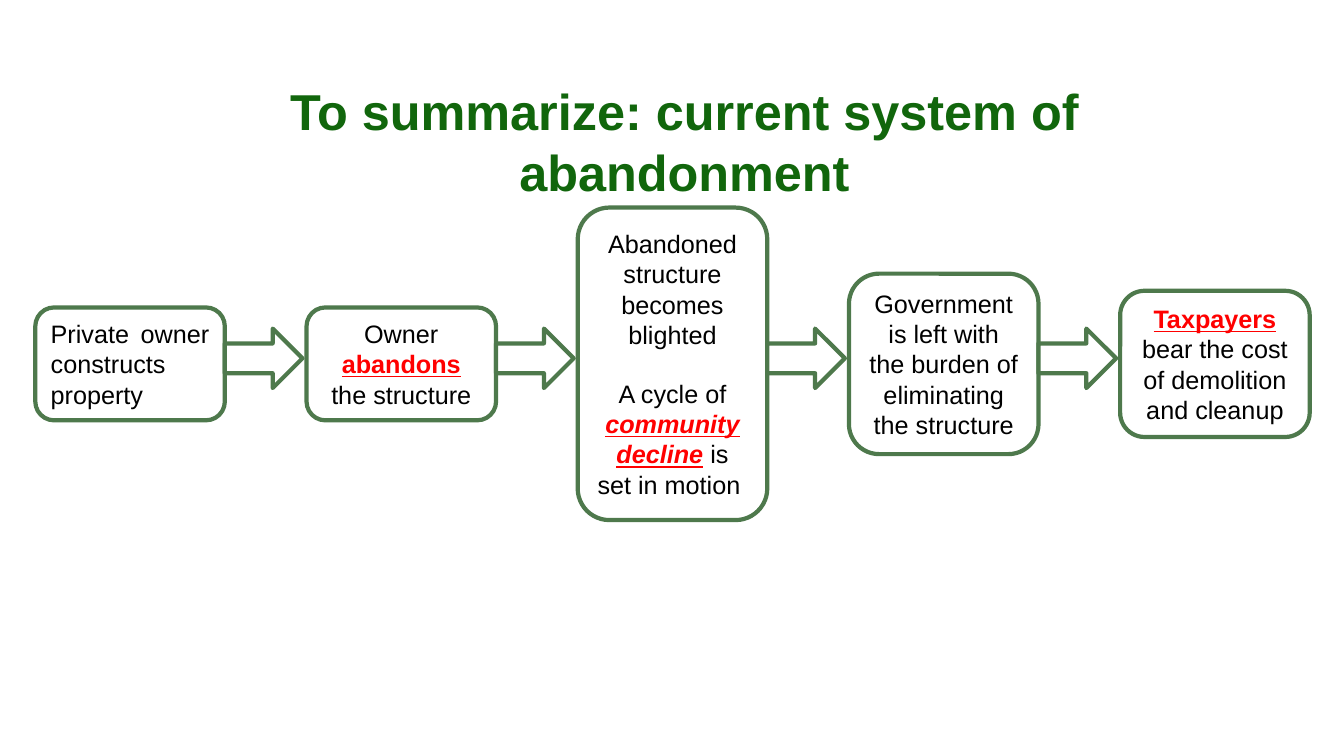
from pptx import Presentation
from pptx.dml.color import RGBColor
from pptx.enum.shapes import MSO_SHAPE
from pptx.enum.text import MSO_ANCHOR, PP_ALIGN
from pptx.util import Inches, Pt

TITLE = RGBColor(0x11, 0x66, 0x0C)
GREEN = RGBColor(0x4E, 0x79, 0x4C)
RED = RGBColor(0xFF, 0x00, 0x00)
BLACK = RGBColor(0x00, 0x00, 0x00)
WHITE = RGBColor(0xFF, 0xFF, 0xFF)

LEFT, PITCH, BOX_W = 0.35, 2.69, 1.88
BOX_MID, ARROW_MID = 3.61, 3.555
ARROW_H, ARROW_GAP = 0.59, 0.04
BLANK_LINE = Pt(20.7)


def add_run(p, text, size=18, color=BLACK, bold=False, italic=False, underline=False):
    r = p.add_run()
    r.text = text
    r.font.name = "Arial"
    r.font.size = Pt(size)
    r.font.color.rgb = color
    r.font.bold = bold
    r.font.italic = italic
    r.font.underline = underline


prs = Presentation()
prs.slide_width, prs.slide_height = Inches(13.33), Inches(7.5)
s = prs.slides.add_slide(prs.slide_layouts[6])

sp = s.shapes.add_textbox(Inches(2.29), Inches(0.75), Inches(9), Inches(1.31))
tf = sp.text_frame
tf.word_wrap = True
p = tf.paragraphs[0]
p.alignment = PP_ALIGN.CENTER
add_run(p, "To summarize: current system of abandonment", size=36, color=TITLE, bold=True)

key = dict(color=RED, bold=True, underline=True)
steps = [
    (1.12, PP_ALIGN.JUSTIFY, [[("Private owner constructs property", {})]]),
    (1.12, PP_ALIGN.CENTER, [[("Owner ", {}), ("abandons", key)], [("the structure", {})]]),
    (3.10, PP_ALIGN.CENTER, [
        [("Abandoned structure becomes blighted", {})],
        [("A cycle of ", {}), ("community decline", dict(key, italic=True)),
         (" is set in motion ", {})],
    ]),
    (1.79, PP_ALIGN.CENTER,
     [[("Government is left with the burden of eliminating the structure", {})]]),
    (1.45, PP_ALIGN.CENTER,
     [[("Taxpayers", key), (" bear the cost of demolition and cleanup", {})]]),
]

for i, (height, align, paragraphs) in enumerate(steps):
    sp = s.shapes.add_shape(
        MSO_SHAPE.ROUNDED_RECTANGLE, Inches(LEFT + i * PITCH),
        Inches(BOX_MID - height / 2), Inches(BOX_W), Inches(height))
    sp.shadow.inherit = False
    sp.fill.background()
    sp.line.color.rgb = GREEN
    sp.line.width = Pt(3)
    tf = sp.text_frame
    tf.word_wrap = True
    tf.vertical_anchor = MSO_ANCHOR.MIDDLE
    for j, runs in enumerate(paragraphs):
        p = tf.add_paragraph() if j else tf.paragraphs[0]
        p.alignment = align
        if j and i == 2:
            p.space_before = BLANK_LINE
        for text, style in runs:
            add_run(p, text, **style)

for i in range(len(steps) - 1):
    sp = s.shapes.add_shape(
        MSO_SHAPE.RIGHT_ARROW, Inches(LEFT + i * PITCH + BOX_W),
        Inches(ARROW_MID - ARROW_H / 2), Inches(PITCH - BOX_W - ARROW_GAP), Inches(ARROW_H))
    sp.shadow.inherit = False
    sp.fill.solid()
    sp.fill.fore_color.rgb = WHITE
    sp.line.color.rgb = GREEN
    sp.line.width = Pt(3)

prs.save("out.pptx")
